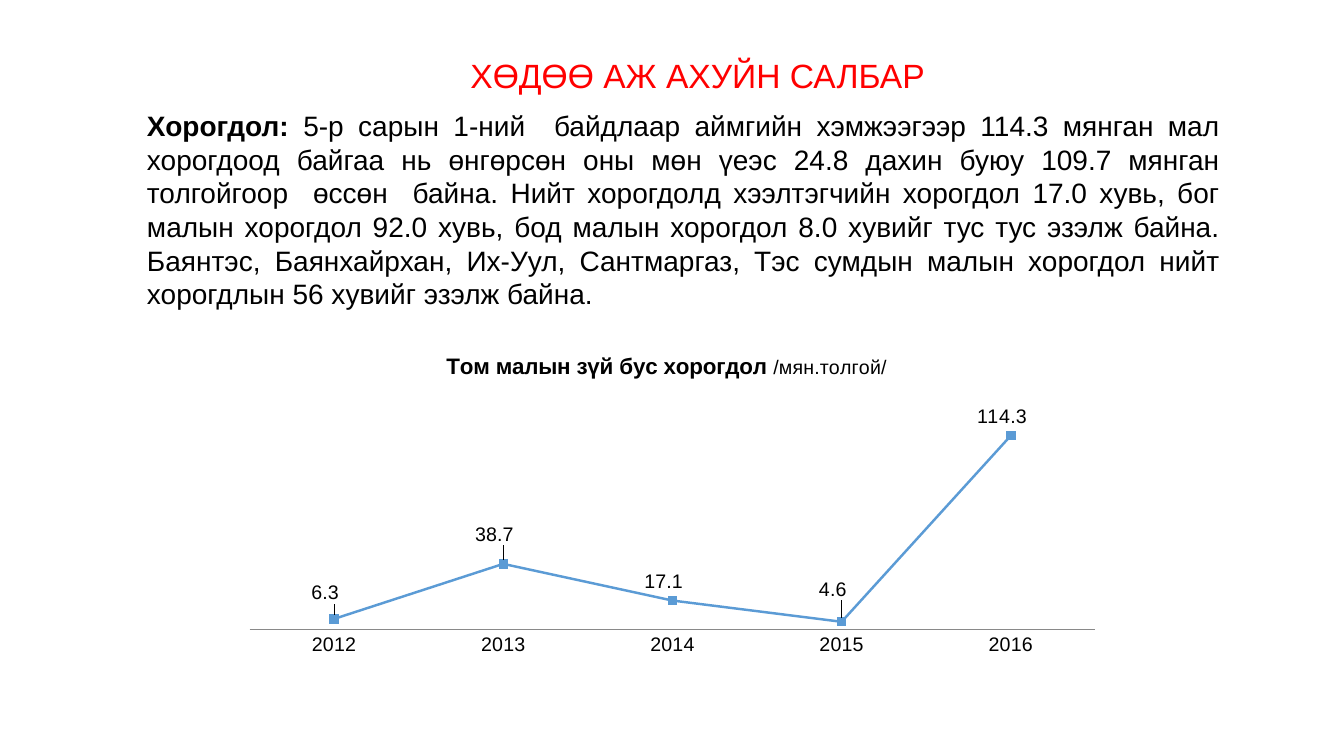
import pptx
import pptx.chart.data
import pptx.dml.color
import pptx.enum.chart
import pptx.enum.text
import pptx.oxml
import pptx.oxml.ns
import pptx.util

Inches = pptx.util.Inches
Pt = pptx.util.Pt
RGBColor = pptx.dml.color.RGBColor
PP_ALIGN = pptx.enum.text.PP_ALIGN
xl = pptx.enum.chart

RED = RGBColor(0xFF, 0x00, 0x00)
BLACK = RGBColor(0x00, 0x00, 0x00)
BLUE = RGBColor(0x5B, 0x9B, 0xD5)
GREY = RGBColor(0x89, 0x89, 0x89)
FONT = "Arial"

# Content: runs are (text, size, bold)
TITLE = [("ХӨДӨӨ АЖ АХУЙН САЛБАР", 24, False)]
BODY = [
    ("Хорогдол:", 20, True),
    (" 5-р сарын 1-ний  байдлаар аймгийн хэмжээгээр 114.3 мянган мал "
     "хорогдоод байгаа нь өнгөрсөн оны мөн үеэс 24.8 дахин буюу 109.7 мянган "
     "толгойгоор  өссөн  байна. Нийт хорогдолд хээлтэгчийн хорогдол 17.0 хувь, "
     "бог малын хорогдол 92.0 хувь, бод малын хорогдол 8.0 хувийг тус тус "
     "эзэлж байна. Баянтэс, Баянхайрхан, Их-Уул, Сантмаргаз, Тэс сумдын малын "
     "хорогдол нийт хорогдлын 56 хувийг эзэлж байна.", 20, False),
]
CHART_TITLE = [("Том малын зүй бус хорогдол ", 16, True), ("/мян.толгой/", 14, False)]
# Year, thousand head, vertical nudge of the label
LOSSES = [
    ("2012", 6.3, -0.02),
    ("2013", 38.7, -0.03),
    ("2014", 17.1, 0),
    ("2015", 4.6, -0.04),
    ("2016", 114.3, 0),
]
LABEL_SHIFT = -0.01


def style_font(font, size, bold=False, color=BLACK):
    font.name, font.size, font.bold = FONT, Pt(size), bold
    font.color.rgb = color


def add_runs(p, runs, align, color=BLACK):
    p.alignment = align
    for text, size, bold in runs:
        r = p.add_run()
        r.text = text
        style_font(r.font, size, bold, color)


def manual_layout(**values):
    parts = "".join(f'<c:{k} val="{v}"/>' for k, v in values.items())
    return pptx.oxml.parse_xml(
        f'<c:layout {pptx.oxml.ns.nsdecls("c")}>'
        f"<c:manualLayout>{parts}</c:manualLayout></c:layout>")


def set_layout(parent, index, **values):
    for old in parent.findall(pptx.oxml.ns.qn("c:layout")):
        parent.remove(old)
    parent.insert(index, manual_layout(**values))


prs = pptx.Presentation()
prs.slide_width, prs.slide_height = Inches(13.33), Inches(7.5)
s = prs.slides.add_slide(prs.slide_layouts[5])

# Title, raised by a deeper bottom inset
sp = s.shapes.title
sp.left, sp.top, sp.width, sp.height = map(Inches, (2.67, 0.3, 8.5, 1.28))
tf = sp.text_frame
tf.vertical_anchor = pptx.enum.text.MSO_ANCHOR.MIDDLE
tf.margin_bottom = Inches(0.4)
p = tf.paragraphs[0]
p.line_spacing = 0.9
add_runs(p, TITLE, PP_ALIGN.CENTER, RED)

# Body text
tf = s.shapes.add_textbox(*map(Inches, (1.36, 1.03, 10.84, 2.46))).text_frame
tf.word_wrap = True
add_runs(tf.paragraphs[0], BODY, PP_ALIGN.JUSTIFY)

# Line chart
data = pptx.chart.data.CategoryChartData(number_format="0.0")
data.categories = [year for year, _, _ in LOSSES]
data.add_series("Series 1", [value for _, value, _ in LOSSES])
chart = s.shapes.add_chart(
    xl.XL_CHART_TYPE.LINE_MARKERS,
    *map(Inches, (2.3, 3.34, 8.74, 3.23)), data).chart
style_font(chart.font, 14)
chart.has_legend = False

add_runs(chart.chart_title.text_frame.paragraphs[0], CHART_TITLE, PP_ALIGN.CENTER)
chart.chart_title.include_in_layout = False
set_layout(chart.chart_title._element, 1, xMode="edge", yMode="edge", x=0.24, y=0.04)

plot = chart.plots[0]
plot.vary_by_categories = False
set_layout(chart._chartSpace.chart.plotArea, 0, layoutTarget="inner",
           xMode="edge", yMode="edge", x=0.02, y=0.17, w=0.96, h=0.73)

# Axes
axis = chart.category_axis
axis.major_tick_mark = xl.XL_TICK_MARK.NONE
axis.format.line.color.rgb = GREY
axis.format.line.width = Pt(0.75)
axis = chart.value_axis
axis.minimum_scale, axis.maximum_scale = 0, 140
axis.has_major_gridlines = False
axis.visible = False

# Series and its labels
series = plot.series[0]
series.smooth = False
series.format.line.color.rgb = BLUE
series.format.line.width = Pt(1.75)
series.marker.style = xl.XL_MARKER_STYLE.SQUARE
series.marker.size = 6
series.marker.format.fill.solid()
series.marker.format.fill.fore_color.rgb = BLUE
series.marker.format.line.color.rgb = BLUE
series.data_labels.show_value = True
for i, (_, _, nudge) in enumerate(LOSSES):
    label = series.points[i].data_label
    label.position = xl.XL_LABEL_POSITION.ABOVE
    style_font(label.font, 14)
    set_layout(series.data_labels._element[i], 1, x=LABEL_SHIFT, y=nudge)

prs.save("out.pptx")
